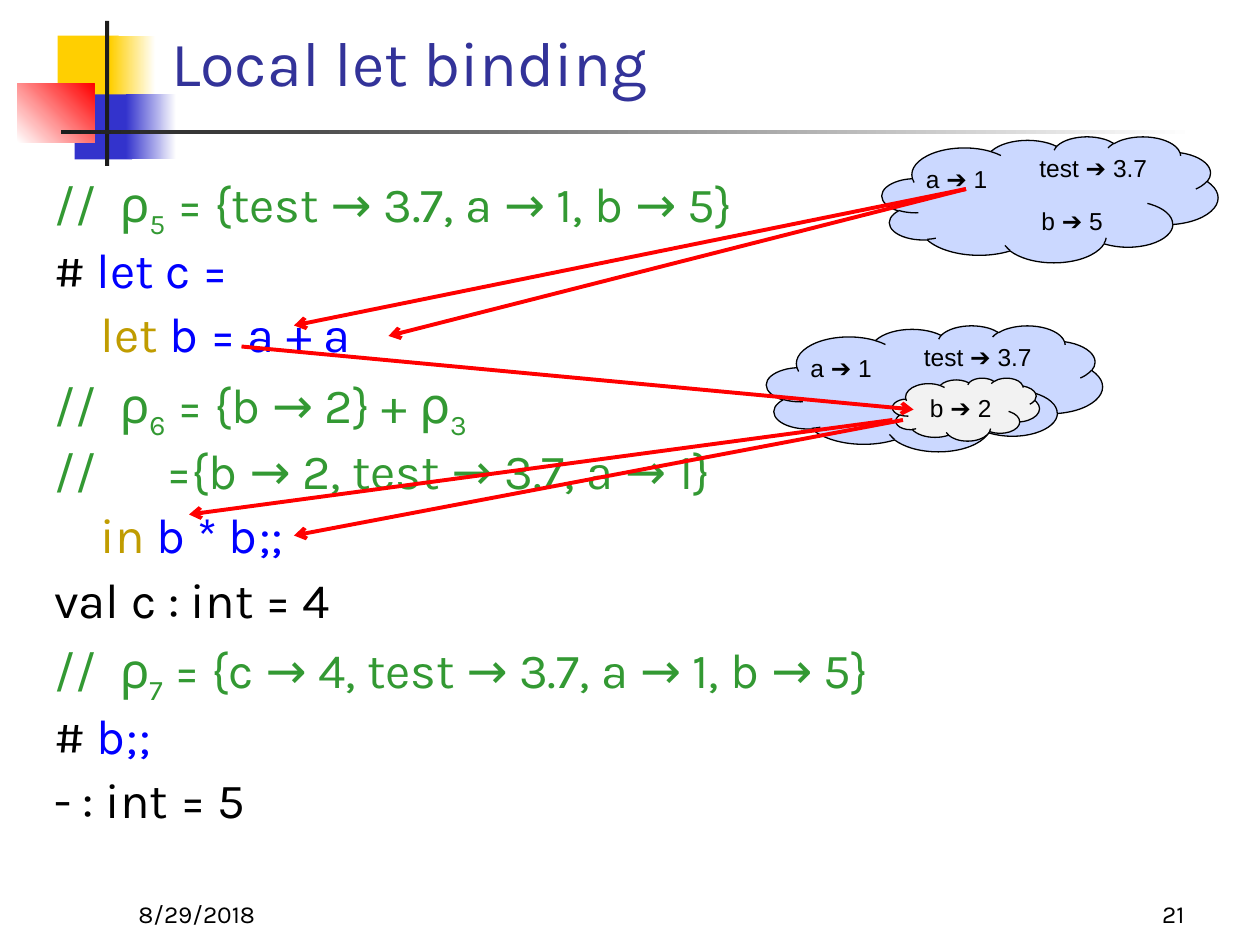
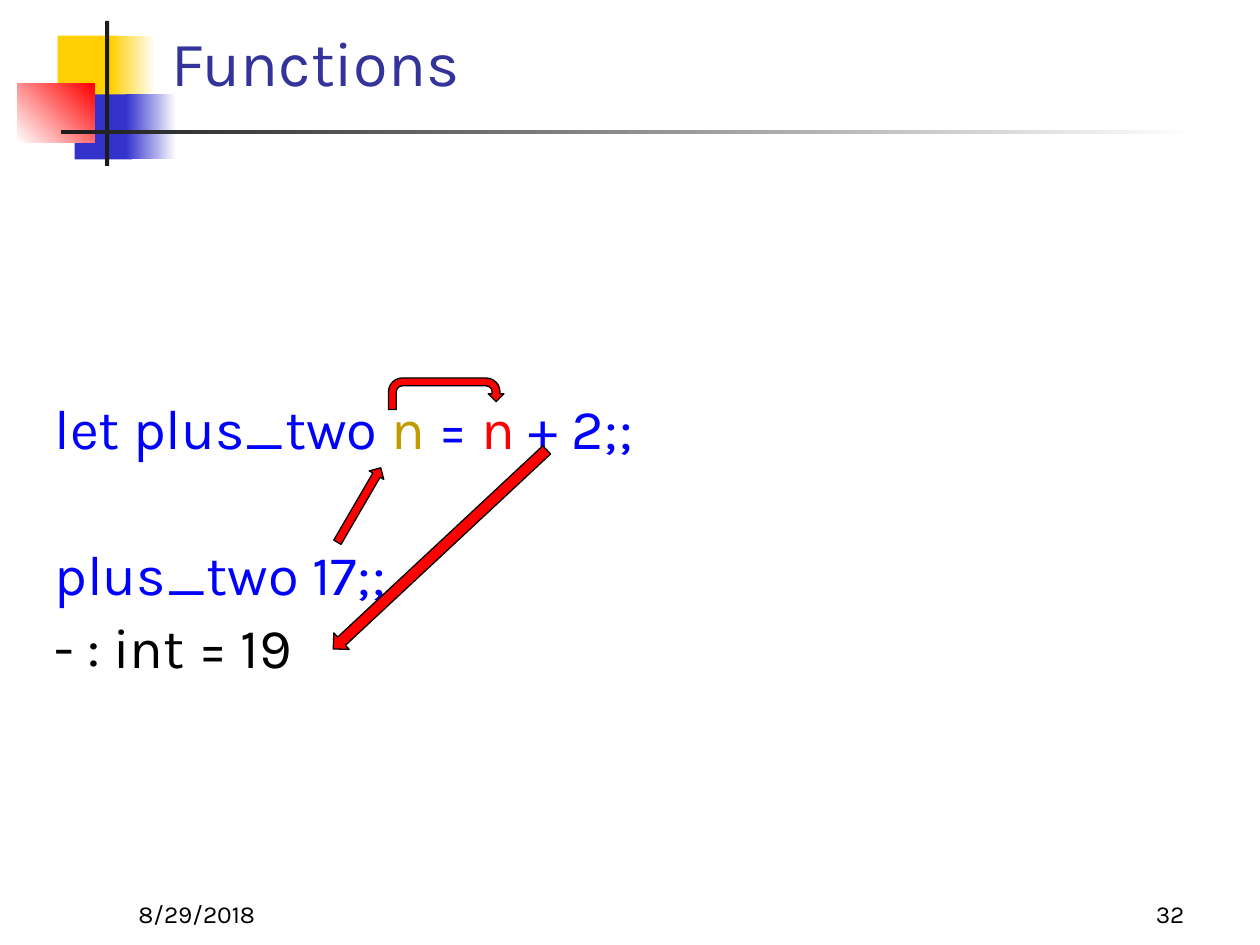
from lxml.etree import SubElement
from pptx import Presentation
from pptx.dml.color import RGBColor
from pptx.enum.shapes import MSO_CONNECTOR, MSO_SHAPE
from pptx.enum.text import MSO_ANCHOR, MSO_AUTO_SIZE, PP_ALIGN
from pptx.oxml.ns import qn
from pptx.util import Inches, Pt

# The page is a grid of 120 columns by 90 rows of square cells.
COLUMNS, ROWS = 120, 90
CELL = Inches(10) / COLUMNS

BLACK = RGBColor(0x00, 0x00, 0x00)
WHITE = RGBColor(0xFF, 0xFF, 0xFF)
CHARCOAL = RGBColor(0x1C, 0x1C, 0x1C)
YELLOW = RGBColor(0xFF, 0xCF, 0x01)
INDIGO = RGBColor(0x33, 0x33, 0xCC)
RED = RGBColor(0xFF, 0x00, 0x00)
TITLE_BLUE = RGBColor(0x33, 0x33, 0x99)
CODE_BLUE = RGBColor(0x00, 0x00, 0xFF)
KEYWORD_GOLD = RGBColor(0xC0, 0x9C, 0x00)
COMMENT_GREEN = RGBColor(0x33, 0x99, 0x33)
CLOUD_BLUE = RGBColor(0x33, 0x66, 0xFF)
PALE_GREY = RGBColor(0xF2, 0xF2, 0xF2)

TEXT_FONT = "Karla"
LABEL_FONT = "Arial"
LINE_HEIGHT = 1.17  # Karla's line height as a share of its size


def cells(*counts):
    return [round(count * CELL) for count in counts]


def write_text(shape, lines, size=14, font=TEXT_FONT, align=PP_ALIGN.LEFT,
               anchor=MSO_ANCHOR.TOP, wrap=True, spacing=None, gaps=()):
    """Fill a shape with lines of (text, colour, is_subscript) spans.

    gaps holds the space before each line after the first, in points.
    """
    frame = shape.text_frame
    frame.auto_size = MSO_AUTO_SIZE.NONE
    frame.word_wrap = wrap
    frame.vertical_anchor = anchor
    for index, line in enumerate(lines):
        para = frame.add_paragraph() if index else frame.paragraphs[0]
        para.alignment = align
        if spacing and index:
            para.space_before = Pt(gaps[index - 1])
        if spacing:
            para.line_spacing = spacing
        for text, colour, *subscript in line:
            span = para.add_run()
            span.text = text
            span.font.size = Pt(size)
            span.font.name = font
            span.font.color.rgb = colour
            if subscript:
                span.font._element.set("baseline", "-25000")


def add_text(shapes, area, lines, **text_format):
    box = shapes.add_textbox(*cells(*area))
    write_text(box, lines, **text_format)
    return box


def add_figure(shapes, kind, area, fill, fade=None, angle=0, outline=None,
               alpha=None, rotation=0):
    """Add a preset shape; fade makes the fill a gradient towards that colour."""
    figure = shapes.add_shape(kind, *cells(*area))
    figure.shadow.inherit = False
    figure.rotation = rotation
    if fade is None:
        figure.fill.solid()
        figure.fill.fore_color.rgb = fill
    else:
        figure.fill.gradient()
        figure.fill.gradient_angle = angle
        for stop, colour in zip(figure.fill.gradient_stops, (fill, fade)):
            stop.color.rgb = colour
    if alpha is not None:
        colour_element = next(figure._element.spPr.iter(qn("a:srgbClr")))
        SubElement(colour_element, qn("a:alpha")).set("val", str(alpha * 1000))
    if outline is None:
        figure.line.fill.background()
    else:
        figure.line.color.rgb = outline
        figure.line.width = Pt(0.75)
    return figure


def add_arrow(page, start, end):
    arrow = page.shapes.add_connector(
        MSO_CONNECTOR.STRAIGHT, *cells(*start, *end))
    arrow.line.color.rgb = RED
    arrow.line.width = Pt(2.25)
    SubElement(arrow.line._get_or_add_ln(), qn("a:tailEnd")).set("type", "arrow")
    SubElement(arrow._element.spPr, qn("a:effectLst"))


def add_corner_motif(page):
    blocks = [
        ((5.5, 3.4, 5.8, 6.2), YELLOW, None, 0),
        ((10.5, 3.4, 4.3, 6.2), YELLOW, WHITE, 0),
        ((7.1, 9, 5.5, 6.2), INDIGO, None, 0),
        ((12, 9, 4.8, 6.2), INDIGO, WHITE, 0),
        ((1.65, 8, 7.35, 5.55), WHITE, RED, 45),
        ((10, 2, 0.4, 13.8), CHARCOAL, None, 0),
        ((5.8, 12.4, 108, 0.4), CHARCOAL, WHITE, 0),
    ]
    for area, fill, fade, angle in blocks:
        add_figure(page.shapes, MSO_SHAPE.RECTANGLE, area, fill, fade, angle)


def add_page(deck, title, number):
    page = deck.slides.add_slide(deck.slide_layouts[5])
    add_corner_motif(page)
    heading = page.shapes.title
    heading.left, heading.top, heading.width, heading.height = cells(
        15.1, 2.15, 102.2, 7.9)
    write_text(heading, [[(title, TITLE_BLUE)]], size=36,
               anchor=MSO_ANCHOR.BOTTOM)
    for column, text, align in ((12, "8/29/2018", PP_ALIGN.LEFT),
                                (89, number, PP_ALIGN.RIGHT)):
        add_text(page.shapes, (column, 83, 25, 6), [[(text, BLACK)]],
                 align=align, anchor=MSO_ANCHOR.BOTTOM)
    return page


def add_code(page, top, lines, size, blank_before=()):
    """Add code lines; blank_before lists the lines set off by a line's height."""
    gap = 0.2 * LINE_HEIGHT * size
    pitch = 0.9 * LINE_HEIGHT * size + gap
    gaps = [round(gap + pitch * (index in blank_before), 1)
            for index in range(1, len(lines))]
    add_text(page.shapes, (4, top, 113.5, 80.4 - top), lines, size=size,
             spacing=0.9, gaps=gaps)


def add_environment(page, left, top, bindings):
    """Draw a cloud holding bindings as (text, column, row, width)."""
    group = page.shapes.add_group_shape()
    add_figure(group.shapes, MSO_SHAPE.CLOUD, (left, top, 32, 12), CLOUD_BLUE,
               outline=BLACK, alpha=25)
    for text, column, row, width in bindings:
        add_text(group.shapes, (left + column, top + row, width, 4.1),
                 [[(text, BLACK)]], font=LABEL_FONT, wrap=False)


def rho_comment(index, rest):
    return [("//  ρ", COMMENT_GREEN), (index, COMMENT_GREEN, True),
            (rest, COMMENT_GREEN)]


def build_let_binding(deck):
    page = add_page(deck, "Local let binding", "21")
    add_code(page, 16, [
        rho_comment("5", " = {test → 3.7, a → 1, b → 5}"),
        [("# ", BLACK), ("let c =", CODE_BLUE)],
        [("    let ", KEYWORD_GOLD), ("b = a + a", CODE_BLUE)],
        rho_comment("6", " = {b → 2} + ρ") + [("3", COMMENT_GREEN, True)],
        [("//      ={b → 2, test → 3.7, a → 1}", COMMENT_GREEN)],
        [("    in ", KEYWORD_GOLD), ("b * b;;", CODE_BLUE)],
        [("val c : int = 4", BLACK)],
        rho_comment("7", " = {c → 4, test → 3.7, a → 1, b → 5}"),
        [("# ", BLACK), ("b;;", CODE_BLUE)],
        [("- : int = 5", BLACK)],
    ], size=28)

    shared = [("test ➔ 3.7", 13.8, 1, 15.2), ("a ➔ 1", 3, 2, 8.9)]
    add_environment(page, 73, 31, shared)
    add_environment(page, 84, 13, shared + [("b ➔ 5", 14, 6, 8.9)])
    local = add_figure(page.shapes, MSO_SHAPE.CLOUD, (85, 36, 14, 6),
                       PALE_GREY, outline=BLACK)
    write_text(local, [[("b ➔ 2", BLACK)]], font=LABEL_FONT, wrap=False,
               align=PP_ALIGN.CENTER, anchor=MSO_ANCHOR.MIDDLE)

    for start, end in (((92, 18), (28, 31)), ((92, 18), (37, 32)),
                       ((23, 33), (87, 39)), ((85, 40), (18, 49)),
                       ((86, 40), (28, 51))):
        add_arrow(page, start, end)


def build_functions(deck):
    page = add_page(deck, "Functions", "32")
    add_code(page, 37.6, [
        [("let plus_two ", CODE_BLUE), ("n ", KEYWORD_GOLD), ("= ", CODE_BLUE),
         ("n", RED), (" + 2;;", CODE_BLUE)],
        [("plus_two 17;;", CODE_BLUE)],
        [("- : int = 19", BLACK)],
    ], size=32, blank_before=(1,))

    for kind, area, rotation in (
            (MSO_SHAPE.U_TURN_ARROW, (37, 36, 11, 3), 0),
            (MSO_SHAPE.RIGHT_ARROW, (30.1, 47.3, 8.2, 1.6), 300.2),
            (MSO_SHAPE.RIGHT_ARROW, (28, 51.25, 27.8, 2.15), 137)):
        add_figure(page.shapes, kind, area, RED, outline=BLACK,
                   rotation=rotation)


def main():
    deck = Presentation()
    deck.slide_width, deck.slide_height = cells(COLUMNS, ROWS)
    build_let_binding(deck)
    build_functions(deck)
    deck.save("out.pptx")


if __name__ == "__main__":
    main()
